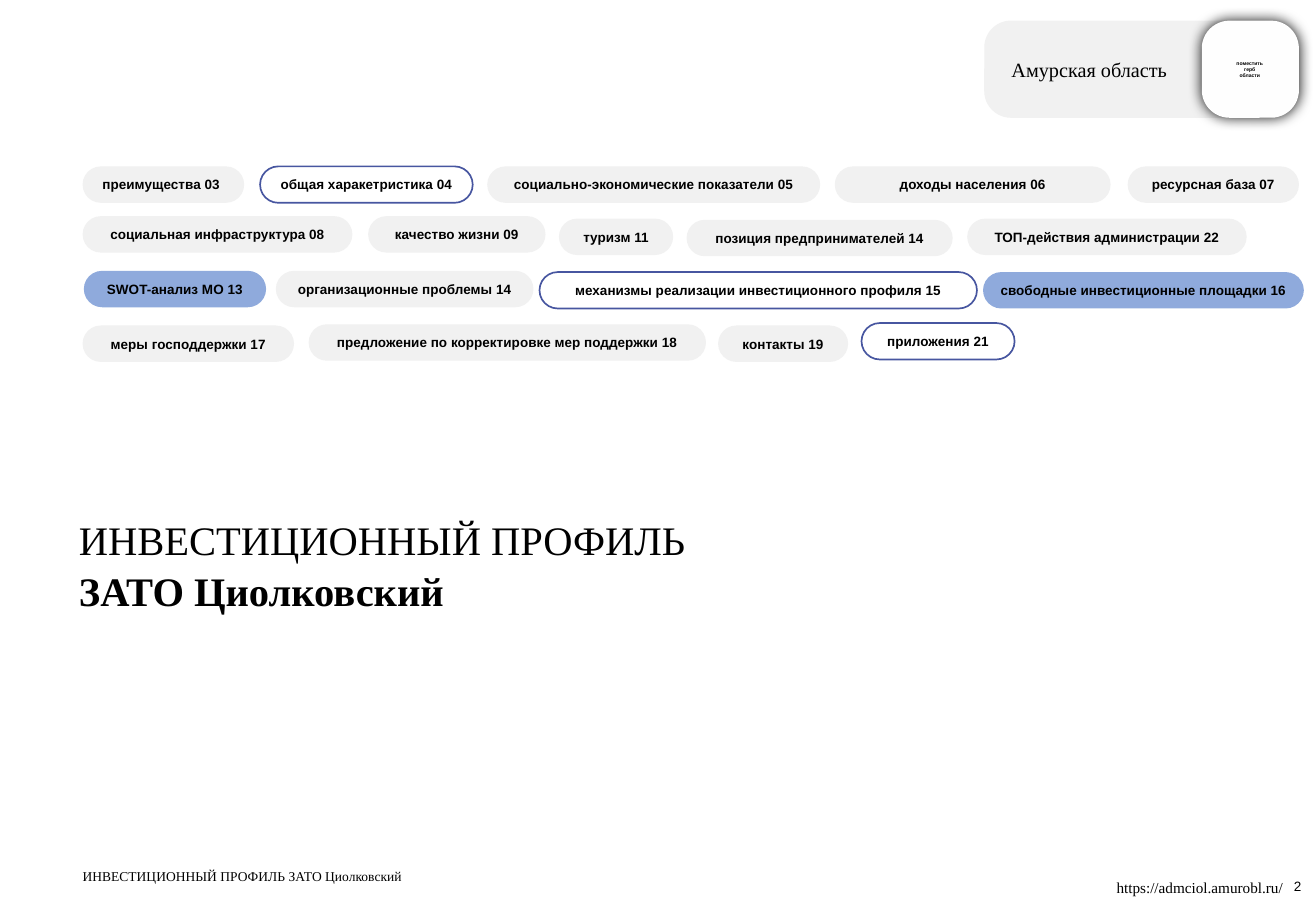
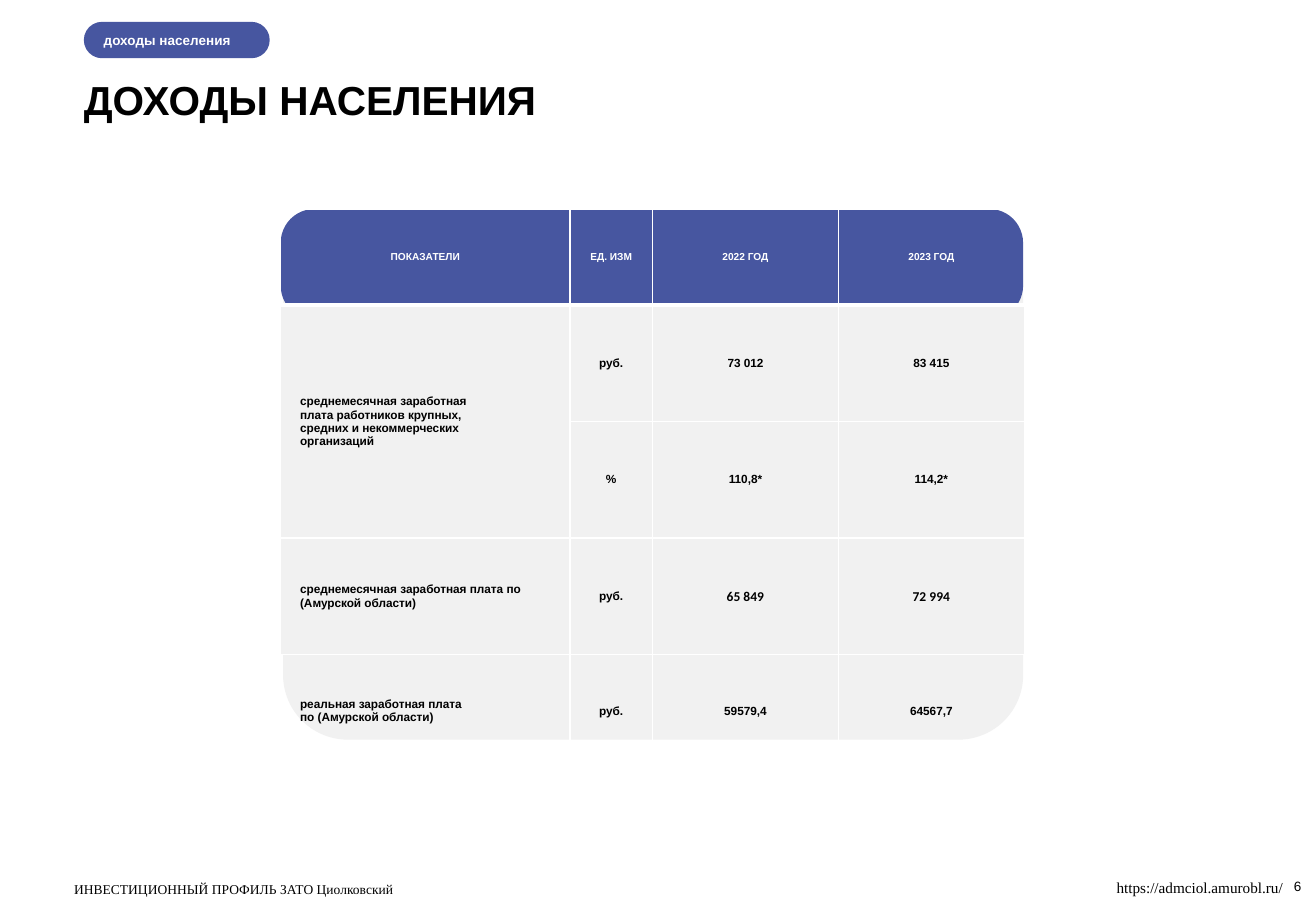
import pptx
import pptx.dml.color
import pptx.enum.shapes
import pptx.enum.text
import pptx.oxml
import pptx.oxml.ns
import pptx.util

PX = 9144  # EMU in one px, 100 px to the inch
HUES = {"ink": "000000", "white": "FFFFFF", "paper": "FEFEFE",
        "gray": "F1F1F1", "navy": "4756A0", "sky": "8FAADC"}
SANS, SERIF = "Arial", "Times New Roman"
ALIGN = pptx.enum.text.PP_ALIGN
ANCHOR = pptx.enum.text.MSO_ANCHOR
ROUND = pptx.enum.shapes.MSO_SHAPE.ROUNDED_RECTANGLE
RGB = pptx.dml.color.RGBColor.from_string
NS = pptx.oxml.ns.nsdecls("a")


def write(frame, text, size=8, font=SANS, hue="ink", bold=False, align=ALIGN.LEFT,
          anchor=ANCHOR.TOP, pad=(0, 0, 0, 0), space=None):
    """Fill a text frame, one paragraph a line; bold may be a list, one flag a line."""
    frame.word_wrap = True
    frame.auto_size = pptx.enum.text.MSO_AUTO_SIZE.NONE
    frame.vertical_anchor = anchor
    (frame.margin_left, frame.margin_top,
     frame.margin_right, frame.margin_bottom) = [n * PX for n in pad]
    for i, line in enumerate(text.split("\n")):
        para = frame.add_paragraph() if i else frame.paragraphs[0]
        para.alignment = align
        para.line_spacing = space
        run = para.add_run()
        run.text = line
        run.font.size = pptx.util.Pt(size)
        run.font.name = font
        run.font.bold = bold[i] if isinstance(bold, list) else bold
        run.font.color.rgb = RGB(HUES[hue])


def block(slide, left, top, width, height, fill=None, line=None, bend=0.5):
    """Add a rounded rectangle."""
    shape = slide.shapes.add_shape(ROUND, left * PX, top * PX, width * PX, height * PX)
    shape.adjustments[0] = bend
    shape.shadow.inherit = False
    if fill:
        shape.fill.solid()
        shape.fill.fore_color.rgb = RGB(HUES[fill])
    else:
        shape.fill.background()
    if line:
        shape.line.color.rgb = RGB(HUES[line])
        shape.line.width = pptx.util.Pt(1)
    else:
        shape.line.fill.background()
    return shape


deck = pptx.Presentation()
deck.slide_width, deck.slide_height = 1083 * PX, 750 * PX
cover, income = [deck.slides.add_slide(deck.slide_layouts[5]) for _ in range(2)]

# Titles
for slide, spot, text, look in (
        (cover, (65, 422, 789, 81), "ИНВЕСТИЦИОННЫЙ ПРОФИЛЬ\nЗАТО Циолковский",
         {"font": SERIF, "bold": [False, True]}),
        (income, (69, 60, 1002, 40), "ДОХОДЫ НАСЕЛЕНИЯ", {"bold": True})):
    title = slide.shapes.title
    title.left, title.top, title.width, title.height = [n * PX for n in spot]
    write(title.text_frame, text, size=24, space=1.05, **look)

# Contents pills: left, top, width, style, label
STYLES = {"plain": ("gray", None), "ring": (None, "navy"), "sky": ("sky", None)}
PILLS = [
    (68, 137, 133, "plain", "преимущества 03"),
    (214, 137, 175, "ring", "общая харакетристика 04"),
    (401, 137, 274, "plain", "социально-экономические показатели 05"),
    (687, 137, 227, "plain", "доходы населения 06"),
    (928, 137, 141, "plain", "ресурсная база 07"),
    (68, 178, 222, "plain", "социальная инфраструктура 08"),
    (303, 178, 146, "plain", "качество жизни 09"),
    (460, 180, 94, "plain", "туризм 11"),
    (565, 181, 219, "plain", "позиция предпринимателей 14"),
    (796, 180, 230, "plain", "ТОП-действия администрации 22"),
    (69, 223, 150, "sky", "SWOT-анализ МО 13"),
    (227, 223, 212, "plain", "организационные проблемы 14"),
    (444, 224, 360, "ring", "механизмы реализации инвестиционного профиля 15"),
    (809, 224, 264, "sky", "свободные инвестиционные площадки 16"),
    (68, 268, 174, "plain", "меры господдержки 17"),
    (254, 267, 327, "plain", "предложение по корректировке мер поддержки 18"),
    (591, 268, 107, "plain", "контакты 19"),
    (709, 266, 126, "ring", "приложения 21"),
]
for i, (left, top, width, style, label) in enumerate(PILLS):
    pill = block(cover, left, top, width, 30, *STYLES[style])
    write(pill.text_frame, label, bold=True, anchor=ANCHOR.MIDDLE,
          align=ALIGN.CENTER if i else ALIGN.LEFT, pad=(0 if i else 12, 0, 0, 0))

# Region badge with a place for the emblem
badge = block(cover, 810, 17, 258, 80, "gray", bend=0.275)
write(badge.text_frame, "Амурская область", size=12, font=SERIF,
      anchor=ANCHOR.MIDDLE, pad=(16, 5, 79, 5))
crest = block(cover, 989, 17, 80, 80, "paper", bend=0.286)
glow = crest.element.spPr.find(pptx.oxml.ns.qn("a:effectLst"))
glow.append(pptx.oxml.parse_xml(
    f'<a:outerShdw {NS} blurRad="106680" dist="0" dir="0" algn="ctr" rotWithShape="0">'
    f'<a:srgbClr val="{HUES["ink"]}"><a:alpha val="92000"/></a:srgbClr></a:outerShdw>'))
hint = cover.shapes.add_textbox(1016 * PX, 50 * PX, 25 * PX, 15 * PX)
write(hint.text_frame, "поместить герб области", size=3, bold=True, align=ALIGN.CENTER)

# Section tag and rounded backing of the table
tag = block(income, 69, 18, 153, 30, "navy")
write(tag.text_frame, "доходы населения", hue="white", bold=True,
      anchor=ANCHOR.MIDDLE, pad=(12, 0, 0, 0))
block(income, 233, 176, 609, 433, "gray", bend=0.123)
block(income, 231, 172, 611, 91, "navy", bend=0.306)

# Income table
ROWS = [
    ("ПОКАЗАТЕЛИ", "ЕД. ИЗМ", "2022 ГОД", "2023 ГОД"),
    ("среднемесячная заработная\nплата работников крупных,\nсредних и некоммерческих\nорганизаций",
     "руб.", "73 012", "83 415"),
    ("", "%", "110,8*", "114,2*"),
    ("среднемесячная заработная плата по (Амурской области)", "руб.", "65 849", "72 994"),
    ("реальная заработная плата\nпо (Амурской области)", "руб.", "59579,4", "64567,7"),
]
WIDE, HIGH = (238, 68, 153, 153), (79, 96, 96, 96, 96)
grid = income.shapes.add_table(len(HIGH), len(WIDE), 231 * PX, 172 * PX,
                               sum(WIDE) * PX, sum(HIGH) * PX).table
grid.first_row = grid.horz_banding = False
for col, width in zip(grid.columns, WIDE):
    col.width = width * PX
for row, height in zip(grid.rows, HIGH):
    row.height = height * PX
grid.cell(1, 0).merge(grid.cell(2, 0))
last = len(ROWS) - 1
for r, row in enumerate(ROWS):
    for c, text in enumerate(row):
        cell = grid.cell(r, c)
        props = cell._tc.get_or_add_tcPr()
        for side in "LRTB":
            thick = (r == 0 and side == "B") or (r == 1 and side == "T")
            props.append(pptx.oxml.parse_xml(
                f'<a:ln{side} {NS} w="{38100 if thick else 12700}"><a:solidFill>'
                f'<a:srgbClr val="{HUES["white"]}"/></a:solidFill></a:ln{side}>'))
        if 0 < r < last:
            cell.fill.solid()
            cell.fill.fore_color.rgb = RGB(HUES["gray"])
        else:
            cell.fill.background()
        # Cell anchor and margins belong to the cell, not to its text frame
        cell.vertical_anchor = ANCHOR.MIDDLE
        name = r > 0 and c == 0
        cell.margin_left, cell.margin_right = (16 if name else 10) * PX, 10 * PX
        cell.margin_top, cell.margin_bottom = 5 * PX, (8 if r == last else 5) * PX
        if not text:
            continue
        odd = r == 3 and c > 1
        for i, line in enumerate(text.split("\n")):
            frame = cell.text_frame
            para = frame.add_paragraph() if i else frame.paragraphs[0]
            para.alignment = ALIGN.LEFT if name else ALIGN.CENTER
            run = para.add_run()
            run.text = line
            run.font.size = pptx.util.Pt(6 if r == 0 else 8 if odd else 7)
            run.font.name = "Calibri" if odd else SANS
            run.font.bold = True
            run.font.color.rgb = RGB(HUES["ink" if r else "white"])

# Footers
for slide, page, left, top in ((cover, "2", 68, 715), (income, "6", 61, 725)):
    for spot, text, look in (
            ((991, 723, 80, 13), page, {"align": ALIGN.RIGHT, "anchor": ANCHOR.BOTTOM}),
            ((left, top, 734, 13), "ИНВЕСТИЦИОННЫЙ ПРОФИЛЬ ЗАТО Циолковский", {"font": SERIF}),
            ((909, 718, 160, 25), "https://admciol.amurobl.ru/",
             {"font": SERIF, "size": 9, "pad": (10, 5, 10, 5)})):
        foot = slide.shapes.add_textbox(*[n * PX for n in spot])
        write(foot.text_frame, text, **look)

deck.save("out.pptx")
